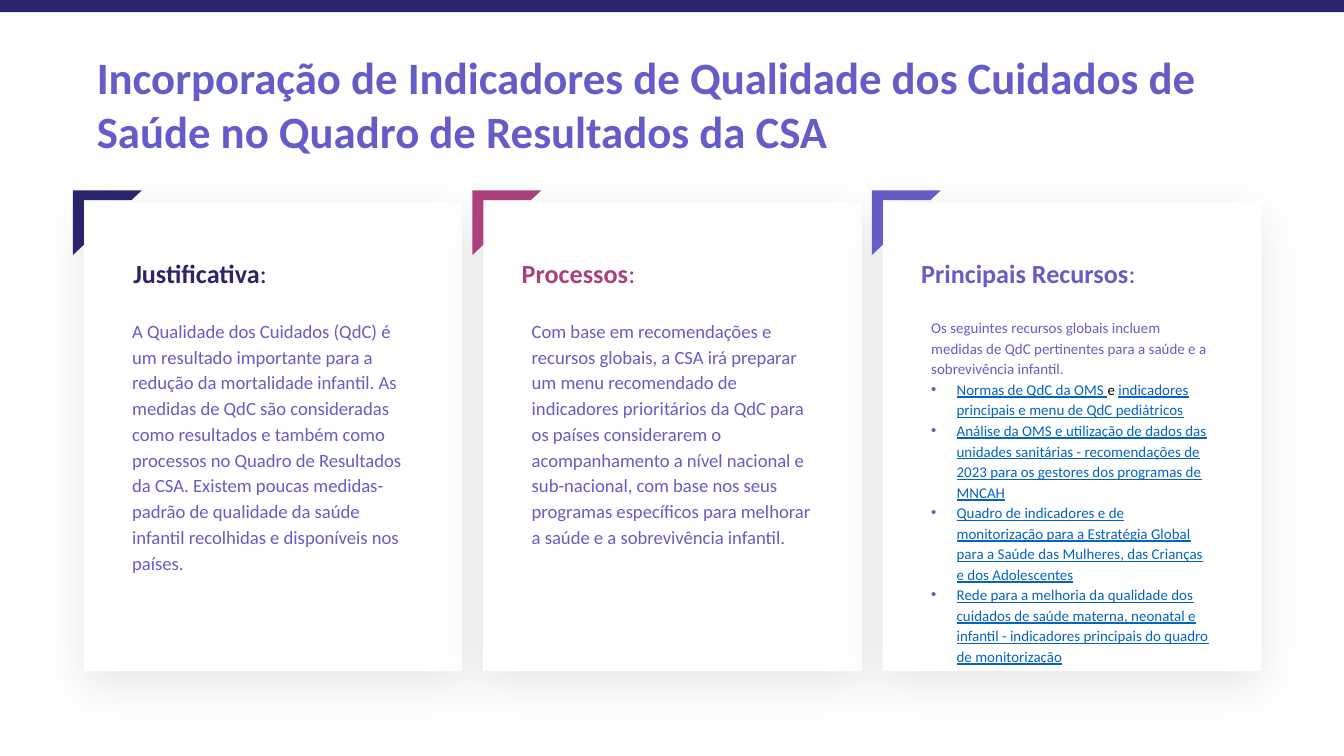
from lxml import etree
from pptx import Presentation
from pptx.dml.color import RGBColor
from pptx.enum.shapes import MSO_SHAPE as Kind
from pptx.enum.text import MSO_ANCHOR as Anchor
from pptx.oxml.ns import qn
from pptx.util import Cm, Pt

NAVY = RGBColor(0x2A, 0x24, 0x6C)
PLUM = RGBColor(0xAA, 0x41, 0x7C)
VIOLET = RGBColor(0x64, 0x5D, 0xC7)
LINK = RGBColor(0x05, 0x63, 0xC1)
BLACK = RGBColor(0, 0, 0)
WHITE = RGBColor(255, 255, 255)

BODY = {"size": Pt(10), "color": VIOLET}
SMALL = {"size": Pt(8), "color": VIOLET}
URL = {"size": Pt(8), "color": LINK, "underline": True}
JOIN = {"size": Pt(8), "color": BLACK}

# Each card: colour, heading, heading indent, paragraphs of (text, format) runs
CARDS = [
    (NAVY, "Justificativa", 0.69, [
        [("A Qualidade dos Cuidados (QdC) é um resultado importante para a "
          "redução da mortalidade infantil. As medidas de QdC são consideradas "
          "como resultados e também como processos no Quadro de Resultados da "
          "CSA. Existem poucas medidas-padrão de qualidade da saúde infantil "
          "recolhidas e disponíveis nos países.", BODY)]]),
    (PLUM, "Processos", 0.48, [
        [("Com base em recomendações e recursos globais, a CSA irá preparar um "
          "menu recomendado de indicadores prioritários da QdC para os países "
          "considerarem o acompanhamento a nível nacional e sub-nacional, com "
          "base nos seus programas específicos para melhorar a saúde e a "
          "sobrevivência infantil.", BODY)]]),
    (VIOLET, "Principais Recursos", 0.48, [
        [("Os seguintes recursos globais incluem medidas de QdC pertinentes "
          "para a saúde e a sobrevivência infantil.", SMALL)],
        [("Normas de QdC da OMS ", URL), ("e ", JOIN),
         ("indicadores principais e menu de QdC pediátricos", URL)],
        [("Análise da OMS e utilização de dados das unidades sanitárias - "
          "recomendações de 2023 para os gestores dos programas de MNCAH", URL)],
        [("Quadro de indicadores e de monitorização para a Estratégia Global "
          "para a Saúde das Mulheres, das Crianças e dos Adolescentes", URL)],
        [("Rede para a melhoria da qualidade dos cuidados de saúde materna, "
          "neonatal e infantil - indicadores principais do quadro de "
          "monitorização", URL)]]),
]


def add_block(slide, kind, box, color):
    block = slide.shapes.add_shape(kind, *map(Cm, box))
    block.shadow.inherit = False
    block.fill.solid()
    block.fill.fore_color.rgb = color
    block.line.fill.background()
    return block


def add_glow(block):
    """Give the block a soft shadow below it."""
    effects = block._element.spPr.find(qn("a:effectLst"))
    outer = etree.SubElement(effects, qn("a:outerShdw"), blurRad=str(Pt(27)),
                             dist=str(Pt(7.5)), dir="5400000", algn="bl",
                             rotWithShape="0")
    black = etree.SubElement(outer, qn("a:srgbClr"), val="000000")
    etree.SubElement(black, qn("a:alpha"), val="10000")


def add_bullet(para):
    props = para._p.get_or_add_pPr()
    props.set("marL", str(Cm(0.48)))
    props.set("indent", str(Cm(-0.48)))
    tint = etree.SubElement(props, qn("a:buClr"))
    etree.SubElement(tint, qn("a:srgbClr"), val=str(VIOLET))
    etree.SubElement(props, qn("a:buFont"), typeface="Arial")
    etree.SubElement(props, qn("a:buChar"), char="•")


def add_text(slide, box, paras, space=1.15):
    """Fill a text box; every paragraph after the first is a bullet."""
    frame = slide.shapes.add_textbox(*map(Cm, box)).text_frame
    inset = Cm(0.25)
    form = {"word_wrap": True, "vertical_anchor": Anchor.TOP,
            "margin_left": inset, "margin_right": inset,
            "margin_top": inset, "margin_bottom": inset}
    for name, value in form.items():
        setattr(frame, name, value)
    for i, runs in enumerate(paras):
        para = frame.add_paragraph() if i else frame.paragraphs[0]
        para.line_spacing = space
        if i:
            add_bullet(para)
        for text, style in runs:
            run = para.add_run()
            run.text = text
            run.font.name = "Calibri"
            for name, value in style.items():
                if name == "color":
                    run.font.color.rgb = value
                else:
                    setattr(run.font, name, value)


def add_header(slide, left, top, width):
    add_block(slide, Kind.RECTANGLE, (0, 0, 25.4, 0.23), NAVY)
    style = {"size": Pt(24), "color": VIOLET, "bold": True}
    add_text(slide, (left, top, width, 1.6),
             [[("Incorporação de Indicadores de Qualidade dos Cuidados de "
                "Saúde no Quadro de Resultados da CSA", style)]], 1.0)


def add_card(slide, box, color, title, indent, paras):
    left, top, wide, high = box
    add_glow(add_block(slide, Kind.RECTANGLE, box, WHITE))
    corner = add_block(slide, Kind.HALF_FRAME,
                       (left - 0.2, top - 0.23, 1.3, 1.22), color)
    corner.adjustments[0] = 0.15
    corner.adjustments[1] = 0.17
    style = {"size": Pt(14), "color": color}
    add_text(slide, (left + indent, top + 0.69, wide - 1, 1.22),
             [[(title, {**style, "bold": True}), (":", style)]])
    add_text(slide, (left + 0.67, top + 1.9, wide - 1.34, 5.69), paras)


def main():
    deck = Presentation()
    deck.slide_width, deck.slide_height = Cm(25.4), Cm(14.29)
    slide = deck.slides.add_slide(deck.slide_layouts[6])
    left, top, wide, high, step = 1.58, 3.83, 7.16, 8.86, 7.55
    add_header(slide, left, 0.69, 22.25)
    for i, card in enumerate(CARDS):
        add_card(slide, (left + i * step, top, wide, high), *card)
    deck.save("out.pptx")


if __name__ == "__main__":
    main()
